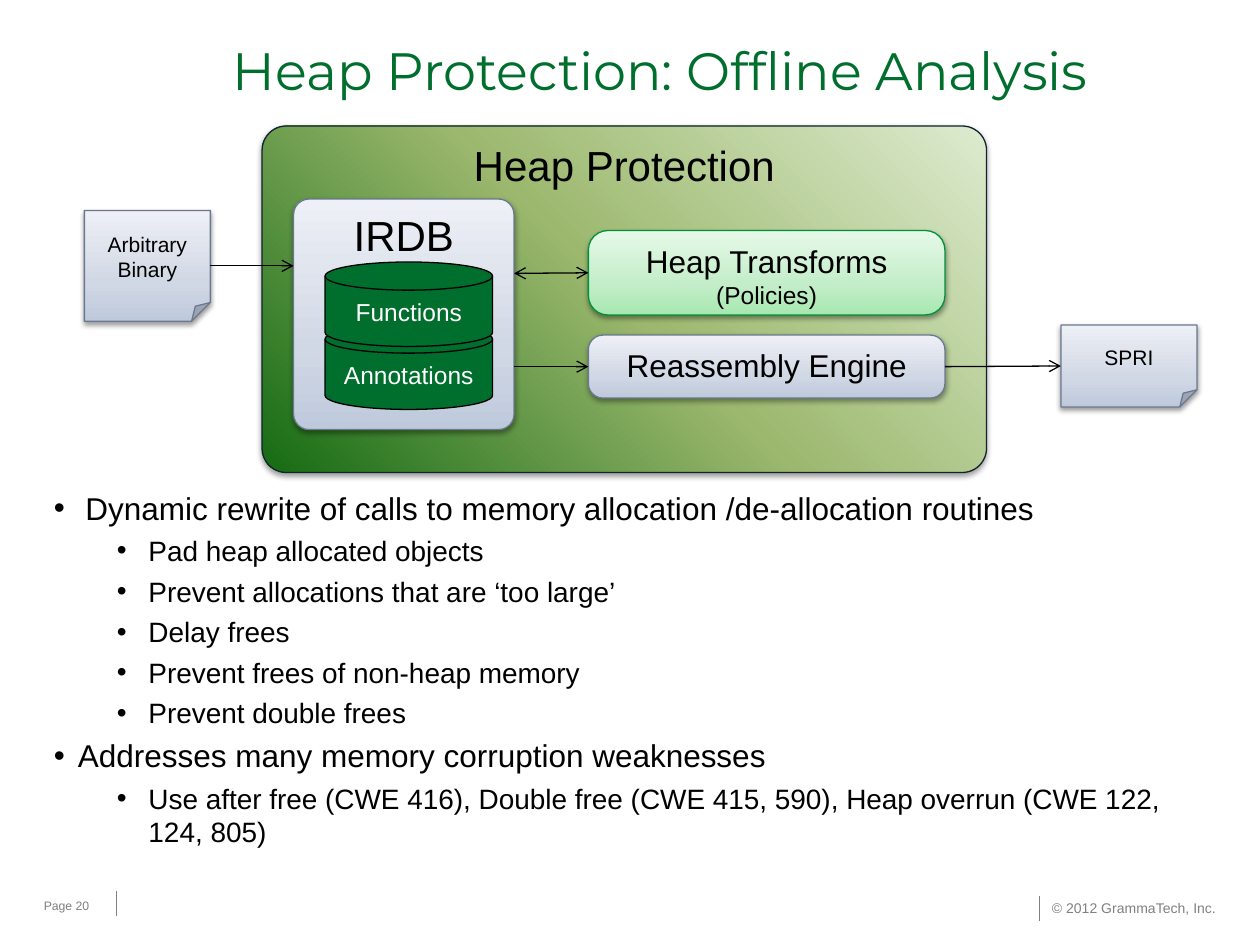
from dataclasses import dataclass

from lxml import etree
from pptx import Presentation
from pptx.dml.color import RGBColor
from pptx.enum.shapes import MSO_CONNECTOR, MSO_SHAPE
from pptx.enum.text import MSO_ANCHOR, PP_ALIGN
from pptx.oxml.ns import qn
from pptx.util import Inches, Pt

ROUNDED = MSO_SHAPE.ROUNDED_RECTANGLE
FOLDED = MSO_SHAPE.FOLDED_CORNER
DISK = MSO_SHAPE.FLOWCHART_MAGNETIC_DISK
STRAIGHT = MSO_CONNECTOR.STRAIGHT
TOP, MIDDLE = MSO_ANCHOR.TOP, MSO_ANCHOR.MIDDLE
LEFT, CENTER = PP_ALIGN.LEFT, PP_ALIGN.CENTER
LEFT_SIDE, RIGHT_SIDE = 1, 3


@dataclass(frozen=True)
class Gradient:
    stops: tuple
    angle: int  # counter-clockwise degrees
    line: str


@dataclass(frozen=True)
class Theme:
    body_font: str = "Arial"
    title_font: str = "Montserrat"
    black: str = "000000"
    white: str = "FFFFFF"
    green: str = "006E2C"
    gray: str = "808080"
    title: int = 30
    heading: int = 24
    large: int = 18
    medium: int = 16
    small: int = 14
    label: int = 12
    copyright: int = 8
    page: int = 7
    outline: float = 0.75
    hairline: float = 0.25
    panel: Gradient = Gradient(
        ((0, "DDEBCF"), (50, "9CB86E"), (100, "156B13")), 225, "10232F")
    steel: Gradient = Gradient(
        ((0, "BEC9DC"), (35, "D1D8E5"), (100, "EDF0F6")), 90, "6B7990")
    mint: Gradient = Gradient(
        ((0, "A7E8B0"), (35, "C2EDC8"), (100, "E7F9E9")), 90, "00903A")


THEME = Theme()


def add_color(parent, color):
    return etree.SubElement(parent, qn("a:srgbClr"), val=color)


def write_text(paragraph, text, *, size, color=THEME.black,
               font=THEME.body_font, align=LEFT, space_before=0):
    paragraph.alignment = align
    paragraph.space_before = Pt(space_before)
    run = paragraph.add_run()
    run.text = text
    run.font.size = Pt(size)
    run.font.name = font
    run.font.color.rgb = RGBColor.from_string(color)


class SlideBuilder:
    def __init__(self, slide, theme):
        self.slide = slide
        self.theme = theme

    def text_box(self, box, text="", anchor=TOP, wrap=True, **text_format):
        shape = self.slide.shapes.add_textbox(*map(Inches, box))
        frame = shape.text_frame
        frame.word_wrap = wrap
        frame.vertical_anchor = anchor
        if text:
            write_text(frame.paragraphs[0], text, **text_format)
        return frame

    def bullets(self, box, items):
        frame = self.text_box(box)
        for index, (level, indent, text) in enumerate(items):
            paragraph = frame.add_paragraph() if index else frame.paragraphs[0]
            paragraph.level = level
            properties = paragraph._p.get_or_add_pPr()
            properties.set("marL", str(Inches(0.75 if level else indent)))
            properties.set("indent", str(-Inches(indent)))
            etree.SubElement(properties, qn("a:buFont"), typeface=self.theme.body_font)
            etree.SubElement(properties, qn("a:buChar"), char="•")
            write_text(paragraph, text, space_before=4 if index else 0,
                       size=self.theme.medium if level else self.theme.large)

    def shape(self, kind, box, lines, line_color, color=THEME.black, anchor=TOP):
        """Add an outlined shape; lines holds (text, size) pairs."""
        shape = self.slide.shapes.add_shape(kind, *map(Inches, box))
        shape.shadow.inherit = False
        shape.line.color.rgb = RGBColor.from_string(line_color)
        shape.line.width = Pt(self.theme.outline)
        frame = shape.text_frame
        frame.word_wrap = True
        frame.vertical_anchor = anchor
        for index, (text, size) in enumerate(lines):
            paragraph = frame.add_paragraph() if index else frame.paragraphs[0]
            write_text(paragraph, text, size=size, color=color, align=CENTER)
        return shape

    def gradient_shape(self, kind, box, lines, gradient, corner, anchor=TOP):
        shape = self.shape(kind, box, lines, gradient.line, anchor=anchor)
        properties = shape._element.spPr
        # Corner size, written directly since folded corners list no adjustments
        geometry = properties.find(qn("a:prstGeom"))
        for values in geometry.findall(qn("a:avLst")):
            geometry.remove(values)
        etree.SubElement(etree.SubElement(geometry, qn("a:avLst")), qn("a:gd"),
                         name="adj", fmla=f"val {round(corner * 100000)}")
        # Gradient stops
        shape.fill.gradient()
        shape.fill.gradient_angle = gradient.angle
        stop_list = properties.find(qn("a:gradFill")).find(qn("a:gsLst"))
        for stop in list(stop_list):
            stop_list.remove(stop)
        for position, color in gradient.stops:
            add_color(etree.SubElement(stop_list, qn("a:gs"),
                                       pos=str(position * 1000)), color)
        # Soft shadow straight below
        shadow = etree.SubElement(
            properties.find(qn("a:effectLst")), qn("a:outerShdw"),
            blurRad=str(Pt(3.1)), dist=str(Pt(1.6)), dir="5400000", rotWithShape="0")
        etree.SubElement(add_color(shadow, self.theme.black), qn("a:alpha"), val="38000")
        return shape

    def disk(self, box, text):
        shape = self.shape(DISK, box, [(text, self.theme.small)], self.theme.black,
                           color=self.theme.white, anchor=MIDDLE)
        shape.fill.solid()
        shape.fill.fore_color.rgb = RGBColor.from_string(self.theme.green)

    def line(self, start, end, color, width, ends=(), source=None, target=None):
        """Draw a line; ends lists headEnd and tailEnd arrowheads in that order."""
        connector = self.slide.shapes.add_connector(
            STRAIGHT, *map(Inches, (*start, *end)))
        connector.line.color.rgb = RGBColor.from_string(color)
        connector.line.width = Pt(width)
        outline = connector._element.spPr.find(qn("a:ln"))
        for name in ends:
            etree.SubElement(outline, qn(f"a:{name}"), type="arrow")
        etree.SubElement(connector._element.spPr, qn("a:effectLst"))
        if source:
            connector.begin_connect(*source)
        if target:
            connector.end_connect(*target)

    def arrow(self, start, end, ends=("tailEnd",), **joins):
        self.line(start, end, self.theme.black, self.theme.outline, ends, **joins)


def main():
    presentation = Presentation()
    presentation.slide_width, presentation.slide_height = Inches(10), Inches(7.5)
    slide = presentation.slides.add_slide(presentation.slide_layouts[6])
    theme = THEME
    builder = SlideBuilder(slide, theme)

    # Footer
    for x, y in ((8.25, 7.11), (0.92, 7.07)):
        builder.line((x, y), (x, y + 0.2), theme.gray, theme.hairline)
    builder.text_box((8.25, 7.09, 1.53, 0.24), "© 2012 GrammaTech, Inc.",
                     wrap=False, size=theme.copyright, color=theme.gray)
    builder.text_box((0.25, 7.02, 0.67, 0.33), "Page 20", anchor=MIDDLE,
                     size=theme.page, color=theme.gray)

    # Title and bullets
    builder.text_box((1.75, 0.25, 8, 0.92), "Heap Protection: Offline Analysis",
                     size=theme.title, color=theme.green, font=theme.title_font)
    builder.bullets((0.33, 3.83, 9.42, 3), [
        (0, 0.25, "Dynamic rewrite of calls to memory allocation /de-allocation routines"),
        (1, 0.25, "Pad heap allocated objects"),
        (1, 0.25, "Prevent allocations that are ‘too large’"),
        (1, 0.25, "Delay frees"),
        (1, 0.25, "Prevent frees of non-heap memory"),
        (1, 0.25, "Prevent double frees"),
        (0, 0.19, "Addresses many memory corruption weaknesses"),
        (1, 0.25, "Use after free (CWE 416), Double free (CWE 415, 590), "
                  "Heap overrun (CWE 122, 124, 805)"),
    ])

    # Diagram boxes
    builder.gradient_shape(ROUNDED, (2.08, 1, 5.75, 2.75),
                           [("Heap Protection", theme.heading)], theme.panel, 0.07)
    binary = builder.gradient_shape(FOLDED, (0.67, 1.67, 1, 0.88),
                                    [("Arbitrary Binary", theme.label)],
                                    theme.steel, 0.17, MIDDLE)
    builder.gradient_shape(ROUNDED, (2.33, 1.58, 1.75, 1.83),
                           [("IRDB", theme.heading)], theme.steel, 0.07)
    transforms = builder.gradient_shape(
        ROUNDED, (4.67, 1.83, 2.83, 0.67),
        [("Heap Transforms", theme.large), ("(Policies)", theme.small)],
        theme.mint, 0.23)
    spri = builder.gradient_shape(FOLDED, (8.42, 2.58, 1.08, 0.65),
                                  [("SPRI", theme.label)], theme.steel, 0.21, MIDDLE)
    reassembly = builder.gradient_shape(ROUNDED, (4.67, 2.66, 2.83, 0.5),
                                        [("Reassembly Engine", theme.large)],
                                        theme.steel, 0.23)

    # Arrows
    builder.arrow((4.08, 2.91), (4.67, 2.91), target=(reassembly, LEFT_SIDE))
    builder.arrow((7.5, 2.91), (8.42, 2.91),
                  source=(reassembly, RIGHT_SIDE), target=(spri, LEFT_SIDE))
    builder.arrow((1.67, 2.11), (2.33, 2.11), source=(binary, RIGHT_SIDE))
    builder.arrow((4.67, 2.17), (4.08, 2.17), ends=("headEnd", "tailEnd"),
                  source=(transforms, LEFT_SIDE))

    # Database disks, lower one first
    for y, text in ((2.58, "Annotations"), (2.08, "Functions")):
        builder.disk((2.58, y, 1.33, 0.67), text)

    presentation.save("out.pptx")


if __name__ == "__main__":
    main()
